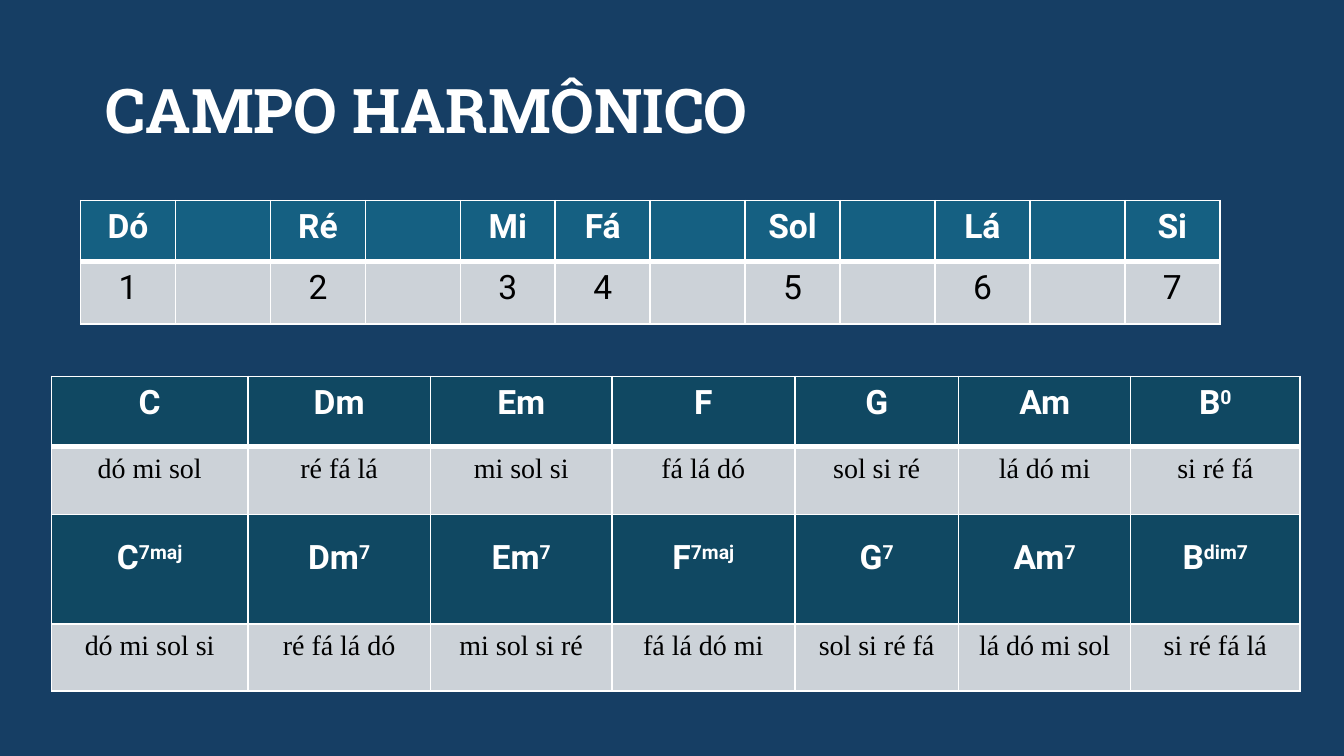
from dataclasses import dataclass

from lxml.etree import SubElement
from pptx import Presentation
from pptx.dml.color import RGBColor
from pptx.enum.text import MSO_ANCHOR, PP_ALIGN
from pptx.oxml.ns import qn
from pptx.util import Inches, Pt

WIDE = Inches(10)
HIGH = WIDE * 9 // 16
WHITE, BLACK, NAVY, GREY = "FFFFFF", "000000", "163E64", "CCD2D8"
TEAL, DEEP = "156082", "104862"


@dataclass(frozen=True)
class Look:
    fill: str
    ink: str
    font: str = "Roboto"
    size: float = 18
    bold: bool = False


@dataclass(frozen=True)
class Row:
    tall: float  # percent of slide height
    look: Look
    texts: list[str]
    pad: float = 0.05  # top margin, inches
    rule: float = 1  # line below, points


@dataclass(frozen=True)
class Grid:
    left: float  # percent of slide width
    top: float  # percent of slide height
    cols: list[float]  # percent of slide width
    rows: list[Row]


def across(share: float) -> int:
    return round(WIDE * share / 100)


def down(share: float) -> int:
    return round(HIGH * share / 100)


def color(code: str) -> RGBColor:
    return RGBColor.from_string(code)


def write(par, text: str, look: Look) -> None:
    """Write one line; what follows ^ is raised."""
    for i, part in enumerate(text.split("^")):
        run = par.add_run()
        run.text = part
        font = run.font
        font.name, font.size, font.bold = look.font, Pt(look.size), look.bold
        font.color.rgb = color(look.ink)
        if i:
            run._r.get_or_add_rPr().set("baseline", "30000")


def border(cell, above: float, below: float) -> None:
    props = cell._tc.get_or_add_tcPr()
    for i, (side, width) in enumerate(
        [("lnL", 1), ("lnR", 1), ("lnT", above), ("lnB", below)]
    ):
        line = props.makeelement(qn(f"a:{side}"), {"w": str(Pt(width))})
        fill = SubElement(line, qn("a:solidFill"))
        SubElement(fill, qn("a:srgbClr"), val=WHITE)
        props.insert(i, line)


def draw(slide, grid: Grid) -> None:
    frame = slide.shapes.add_table(
        len(grid.rows), len(grid.cols), across(grid.left), down(grid.top),
        across(sum(grid.cols)), down(sum(row.tall for row in grid.rows)),
    )
    table = frame.table
    for col, share in zip(table.columns, grid.cols):
        col.width = across(share)
    above = 1
    for r, row in enumerate(grid.rows):
        table.rows[r].height = down(row.tall)
        for c, text in enumerate(row.texts):
            cell = table.cell(r, c)
            cell.fill.solid()
            cell.fill.fore_color.rgb = color(row.look.fill)
            cell.margin_top = Inches(row.pad)
            border(cell, above, row.rule)
            if text:
                par = cell.text_frame.paragraphs[0]
                par.alignment = PP_ALIGN.CENTER
                write(par, text, row.look)
        above = row.rule


def title(slide, text: str) -> None:
    box = slide.shapes.add_textbox(across(6.9), down(5.3), across(86.2), down(19.4))
    frame = box.text_frame
    frame.word_wrap = True
    frame.vertical_anchor = MSO_ANCHOR.MIDDLE
    par = frame.paragraphs[0]
    par.line_spacing = 0.9
    write(par, text, Look(NAVY, WHITE, "Roboto Slab", 33, True))


# Styles of the rows
NOTE = Look(TEAL, WHITE, bold=True)
STEP = Look(GREY, BLACK)
CHORD = Look(DEEP, WHITE, bold=True)
TONES = Look(GREY, BLACK, "Times New Roman", 15)

# Scale: twelve equal semitones
SCALE = Grid(6, 26.55, [84.8 / 12] * 12, [
    Row(8, NOTE, ["Dó", "", "Ré", "", "Mi", "Fá", "", "Sol", "", "Lá", "", "Si"],
        rule=3),
    Row(8.3, STEP, ["1", "", "2", "", "3", "4", "", "5", "", "6", "", "7"]),
])

# Chords: triads, then sevenths
CHORDS = Grid(3.84, 49.8, [14.6, 13.6, 13.5, 13.6, 12.2, 12.8, 12.6], [
    Row(9.3, CHORD, ["C", "Dm", "Em", "F", "G", "Am", "B^0"], rule=3),
    Row(8.95, TONES, ["dó mi sol", "ré fá lá", "mi sol si", "fá lá dó",
                      "sol si ré", "lá dó mi", "si ré fá"]),
    Row(14.5, CHORD, ["C^7maj", "Dm^7", "Em^7", "F^7maj", "G^7", "Am^7",
                      "B^dim7"], pad=0.18),
    Row(8.9, TONES, ["dó mi sol si", "ré fá lá dó", "mi sol si ré",
                     "fá lá dó mi", "sol si ré fá", "lá dó mi sol",
                     "si ré fá lá"]),
])


def main() -> None:
    deck = Presentation()
    deck.slide_width, deck.slide_height = WIDE, HIGH
    slide = deck.slides.add_slide(deck.slide_layouts[6])
    slide.background.fill.solid()
    slide.background.fill.fore_color.rgb = color(NAVY)
    title(slide, "CAMPO HARMÔNICO")
    for grid in (SCALE, CHORDS):
        draw(slide, grid)
    deck.save("out.pptx")


if __name__ == "__main__":
    main()
